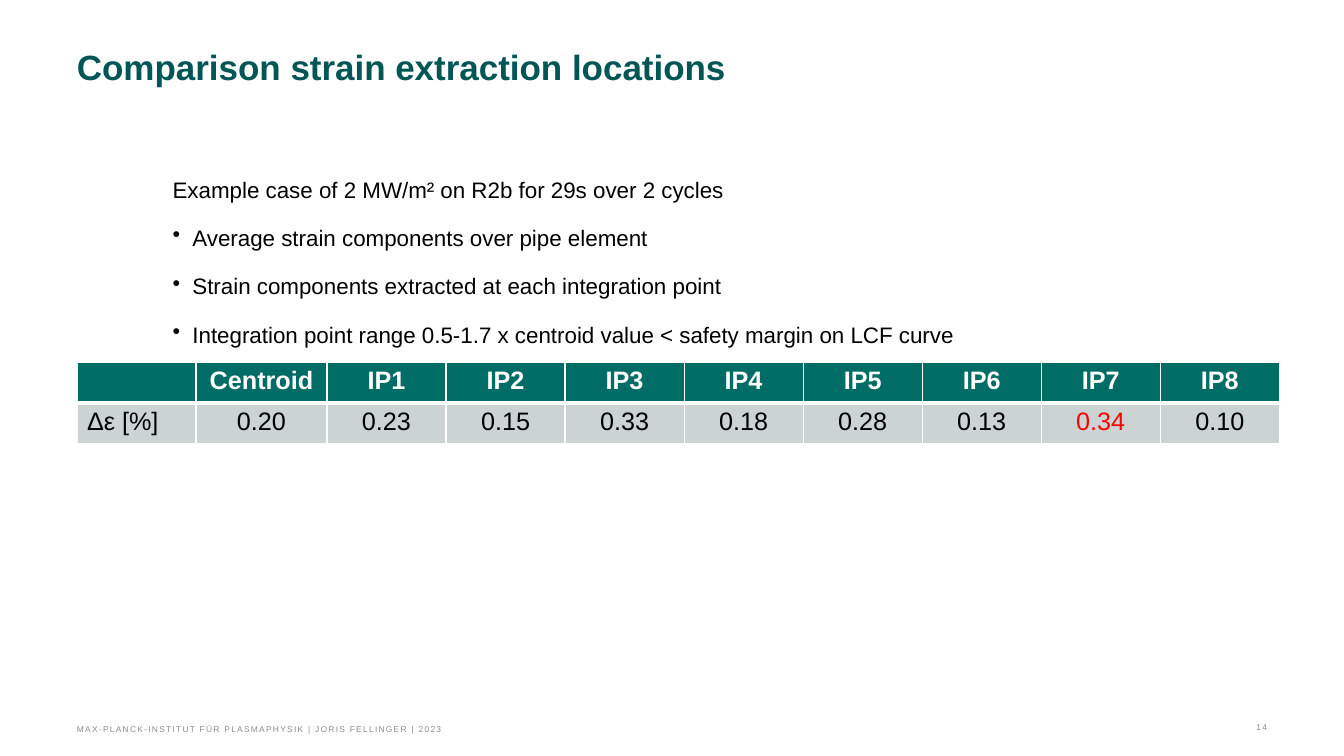
from pptx import Presentation
from pptx.dml.color import RGBColor
from pptx.enum.text import MSO_ANCHOR, PP_ALIGN
from pptx.oxml import parse_xml
from pptx.oxml.ns import nsdecls
from pptx.util import Cm, Pt

LEFT, CENTER, RIGHT = PP_ALIGN.LEFT, PP_ALIGN.CENTER, PP_ALIGN.RIGHT
TOP, BOTTOM = MSO_ANCHOR.TOP, MSO_ANCHOR.BOTTOM
COLORS = {
    "title": "005555",
    "header": "006C66",
    "row": "CCD4D3",
    "white": "FFFFFF",
    "black": "000000",
    "red": "FF0000",
    "footer": "8C8C8C",
}
MARGIN_LEFT = Cm(1.94)


def write(paragraph, text, size=16, color="black", bold=False, align=LEFT,
          line=None, before=None, tracking=None, bullet=False):
    if bullet:
        properties = paragraph._p.get_or_add_pPr()
        properties.set("marL", str(Cm(0.5)))
        properties.set("indent", str(Cm(-0.5)))
        properties.append(parse_xml(f'<a:buChar {nsdecls("a")} char="•"/>'))
    paragraph.alignment = align
    if line:
        paragraph.line_spacing = Pt(line)
    if before:
        paragraph.space_before = Pt(before)
    run = paragraph.add_run()
    run.text = text
    run.font.name = "Arial"
    run.font.size = Pt(size)
    run.font.bold = bold
    run.font.color.rgb = RGBColor.from_string(COLORS[color])
    if tracking:
        run._r.get_or_add_rPr().set("spc", str(round(tracking * 100)))


def add_frame(left, top, width, height, anchor=TOP):
    """Add a wrapping text box without insets and return its text frame."""
    frame = slide.shapes.add_textbox(left, top, width, height).text_frame
    frame.word_wrap = True
    frame.vertical_anchor = anchor
    frame.margin_left = frame.margin_right = 0
    frame.margin_top = frame.margin_bottom = 0
    return frame


presentation = Presentation()
presentation.slide_width = Cm(33.87)
presentation.slide_height = Cm(19.05)
slide = presentation.slides.add_slide(presentation.slide_layouts[6])

# Strain table
strains = {
    "": "Δε [%]",
    "Centroid": "0.20",
    "IP1": "0.23",
    "IP2": "0.15",
    "IP3": "0.33",
    "IP4": "0.18",
    "IP5": "0.28",
    "IP6": "0.13",
    "IP7": "0.34",
    "IP8": "0.10",
}
table = slide.shapes.add_table(2, len(strains), MARGIN_LEFT, Cm(9.12),
                               Cm(30.3), Cm(2.06)).table
for row in table.rows:
    row.height = Cm(1.03)
for column, (heading, value) in enumerate(strains.items()):
    table.columns[column].width = Cm(3.3 if heading == "Centroid" else 3)
    header_cell, value_cell = table.cell(0, column), table.cell(1, column)
    if heading:
        write(header_cell.text_frame.paragraphs[0], heading, size=18,
              color="white", bold=True, align=CENTER)
    write(value_cell.text_frame.paragraphs[0], value, size=18,
          color="red" if heading == "IP7" else "black",
          align=CENTER if heading else LEFT)
    for cell, fill, thick_side in ((header_cell, "header", "B"),
                                   (value_cell, "row", "T")):
        cell.fill.solid()
        cell.fill.fore_color.rgb = RGBColor.from_string(COLORS[fill])
        for position, side in enumerate("LRTB"):
            width = Pt(3 if side == thick_side else 1)
            cell._tc.get_or_add_tcPr().insert(position, parse_xml(
                f'<a:ln{side} {nsdecls("a")} w="{width}"><a:solidFill>'
                f'<a:srgbClr val="{COLORS["white"]}"/></a:solidFill></a:ln{side}>'))

# Title
title = add_frame(MARGIN_LEFT, Cm(1.22), Cm(26.6), Cm(2.49))
write(title.paragraphs[0], "Comparison strain extraction locations",
      size=25, color="title", bold=True, line=28)

# Footer
page_number = add_frame(Cm(31.01), Cm(18.03), Cm(0.92), Cm(0.41), BOTTOM)
write(page_number.paragraphs[0], "14", size=6, color="footer",
      align=RIGHT, tracking=0.9)
footer = add_frame(MARGIN_LEFT, Cm(18.03), Cm(22.76), Cm(0.46), BOTTOM)
write(footer.paragraphs[0],
      "MAX-PLANCK-INSTITUT FÜR PLASMAPHYSIK | JORIS FELLINGER | 2023",
      size=6, color="footer", tracking=0.9)

# Example case
example = add_frame(Cm(4.35), Cm(4.3), Cm(19.97), Cm(4.56))
write(example.paragraphs[0],
      "Example case of 2 MW/m² on R2b for 29s over 2 cycles", line=23)
for finding in (
    "Average strain components over pipe element",
    "Strain components extracted at each integration point",
    "Integration point range 0.5-1.7 x centroid value < safety margin on LCF curve",
):
    write(example.add_paragraph(), finding, line=23, before=11.5, bullet=True)

presentation.save("out.pptx")
